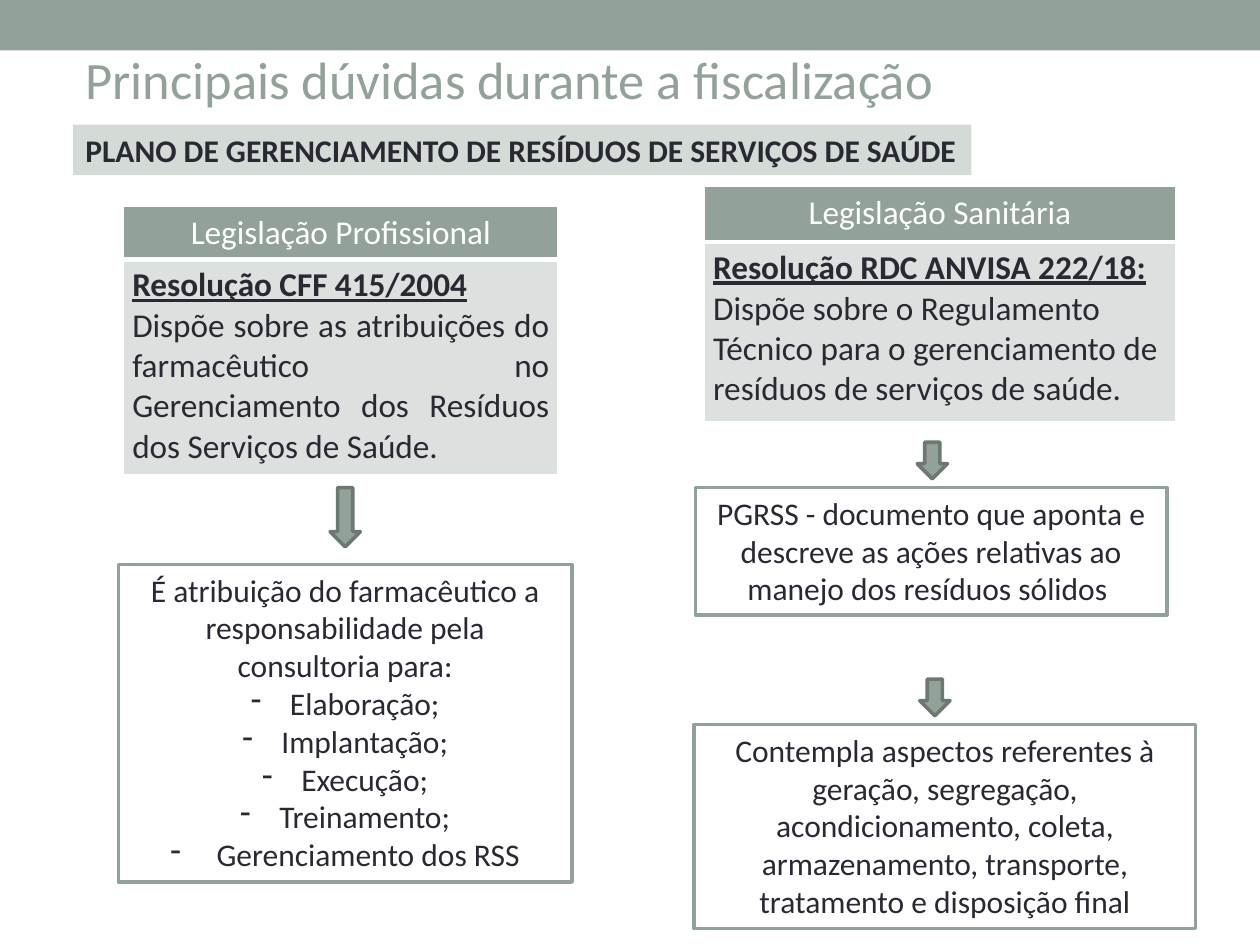
from typing import NamedTuple

from lxml import etree
from pptx import Presentation
from pptx.dml.color import RGBColor
from pptx.enum.shapes import MSO_SHAPE
from pptx.enum.text import MSO_ANCHOR, PP_ALIGN
from pptx.oxml.ns import qn
from pptx.util import Inches, Pt

RECT, DOWN_ARROW = MSO_SHAPE.RECTANGLE, MSO_SHAPE.DOWN_ARROW
LEFT, CENTER, JUSTIFY = PP_ALIGN.LEFT, PP_ALIGN.CENTER, PP_ALIGN.JUSTIFY
TOP, MIDDLE = MSO_ANCHOR.TOP, MSO_ANCHOR.MIDDLE
FONT = "Calibri"
LINE_WIDTH = Pt(2.08)
COLORS = {
    "sage": "93A299",
    "dark_sage": "6D7871",
    "pale_sage": "D4DAD6",
    "cell": "DCE0DE",
    "ink": "292934",
    "white": "FFFFFF",
}


class Box(NamedTuple):
    left: float
    top: float
    width: float
    height: float


class LawTable(NamedTuple):
    box: Box
    header_height: float
    header: str
    law: str
    summary: str
    align: PP_ALIGN


class Note(NamedTuple):
    box: Box
    text: str
    items: tuple[str, ...] = ()


TABLES = [
    LawTable(Box(0.98, 1.64, 3.45, 2.12), 0.41, "Legislação Profissional",
             "Resolução CFF 415/2004",
             "Dispõe sobre as atribuições do farmacêutico no Gerenciamento "
             "dos Resíduos dos Serviços de Saúde.", JUSTIFY),
    LawTable(Box(5.59, 1.48, 3.74, 1.87), 0.44, "Legislação Sanitária",
             "Resolução RDC ANVISA 222/18:",
             "Dispõe sobre o Regulamento Técnico para o gerenciamento de "
             "resíduos de serviços de saúde.", LEFT),
]
NOTES = [
    Note(Box(0.94, 4.48, 3.6, 2.52),
         "É atribuição do farmacêutico a responsabilidade pela consultoria para:",
         ("Elaboração;", "Implantação;", "Execução;", "Treinamento;",
          " Gerenciamento dos RSS")),
    Note(Box(5.52, 3.87, 3.74, 1.01),
         "PGRSS - documento que aponta e descreve as ações relativas ao "
         "manejo dos resíduos sólidos "),
    Note(Box(5.51, 5.75, 3.98, 1.62),
         "Contempla aspectos referentes à geração, segregação, acondicionamento, "
         "coleta, armazenamento, transporte, tratamento e disposição final"),
]
ARROWS = [
    Box(2.62, 3.87, 0.24, 0.47),
    Box(7.28, 3.51, 0.24, 0.29),
    Box(7.3, 5.39, 0.24, 0.29),
]


def rgb(name: str) -> RGBColor:
    return RGBColor.from_string(COLORS[name])


def inches(box: Box) -> list[Inches]:
    return [Inches(v) for v in box]


def add_shape(s, kind: MSO_SHAPE, box: Box, fill: str, line: str | None = None):
    sp = s.shapes.add_shape(kind, *inches(box))
    sp.shadow.inherit = False
    sp.fill.solid()
    sp.fill.fore_color.rgb = rgb(fill)
    if line:
        sp.line.color.rgb = rgb(line)
        sp.line.width = LINE_WIDTH
    else:
        sp.line.fill.background()
    return sp


def write(tf, texts: list[str], size: float, color: str, align: PP_ALIGN = LEFT,
          bold: bool = False, anchor: MSO_ANCHOR = TOP) -> None:
    """Fill a text frame with one paragraph per text, all in one style."""
    tf.word_wrap = True
    tf.vertical_anchor = anchor
    for i, text in enumerate(texts):
        p = tf.add_paragraph() if i else tf.paragraphs[0]
        p.text = text
        p.alignment = align
        p.font.name = FONT
        p.font.size = Pt(size)
        p.font.bold = bold
        p.font.color.rgb = rgb(color)


def add_dash(p) -> None:
    """Give a paragraph a hanging dash bullet."""
    pPr = p._p.get_or_add_pPr()
    indent = Inches(0.31)
    pPr.set("marL", str(indent))
    pPr.set("indent", str(-indent))
    bullet = etree.Element(qn("a:buChar"), char="-")
    pPr.insert_element_before(bullet, "a:tabLst", "a:defRPr", "a:extLst")


def add_note(s, note: Note) -> None:
    tf = add_shape(s, RECT, note.box, "white", "sage").text_frame
    write(tf, [note.text, *note.items], 18, "ink", CENTER)
    for p in tf.paragraphs[1:]:
        add_dash(p)


def set_borders(cell, bottom: float) -> None:
    tcPr = cell._tc.get_or_add_tcPr()
    widths = {"a:lnL": 1, "a:lnR": 1, "a:lnT": 1, "a:lnB": bottom}
    for i, (tag, width) in enumerate(widths.items()):
        ln = etree.Element(qn(tag), w=str(Pt(width)))
        fill = etree.SubElement(ln, qn("a:solidFill"))
        etree.SubElement(fill, qn("a:srgbClr"), val=COLORS["white"])
        tcPr.insert(i, ln)


def add_law_table(s, law: LawTable) -> None:
    table = s.shapes.add_table(2, 1, *inches(law.box)).table
    heights = (law.header_height, law.box.height - law.header_height)
    for row, height in zip(table.rows, heights):
        row.height = Inches(height)
    header, body = table.cell(0, 0), table.cell(1, 0)
    for cell, fill, bottom in ((header, "sage", 3), (body, "cell", 1)):
        cell.fill.solid()
        cell.fill.fore_color.rgb = rgb(fill)
        cell.margin_left = cell.margin_right = Inches(0.07)
        cell.margin_top = cell.margin_bottom = Inches(0.05)
        set_borders(cell, bottom)
    write(header.text_frame, [law.header], 19, "white", CENTER)
    write(body.text_frame, [law.law, law.summary], 19, "ink", law.align)
    name = body.text_frame.paragraphs[0]
    name.alignment = LEFT
    name.font.bold = name.font.underline = True


def main() -> None:
    prs = Presentation()
    prs.slide_width, prs.slide_height = Inches(10), Inches(7.5)
    s = prs.slides.add_slide(prs.slide_layouts[6])

    add_shape(s, RECT, Box(0, 0, 10, 0.4), "sage")
    title = s.shapes.add_textbox(*inches(Box(0.58, 0.38, 7.74, 0.87))).text_frame
    write(title, ["Principais dúvidas durante a fiscalização"], 30, "sage")
    title.paragraphs[0].line_spacing = 0.9
    subtitle = add_shape(s, RECT, Box(0.58, 0.99, 7.13, 0.4), "pale_sage")
    write(subtitle.text_frame,
          ["PLANO DE GERENCIAMENTO DE RESÍDUOS DE SERVIÇOS DE SAÚDE"],
          18, "ink", bold=True, anchor=MIDDLE)

    for law in TABLES:
        add_law_table(s, law)
    for note in NOTES:
        add_note(s, note)
    for box in ARROWS:
        add_shape(s, DOWN_ARROW, box, "sage", "dark_sage")
    prs.save("out.pptx")


if __name__ == "__main__":
    main()
